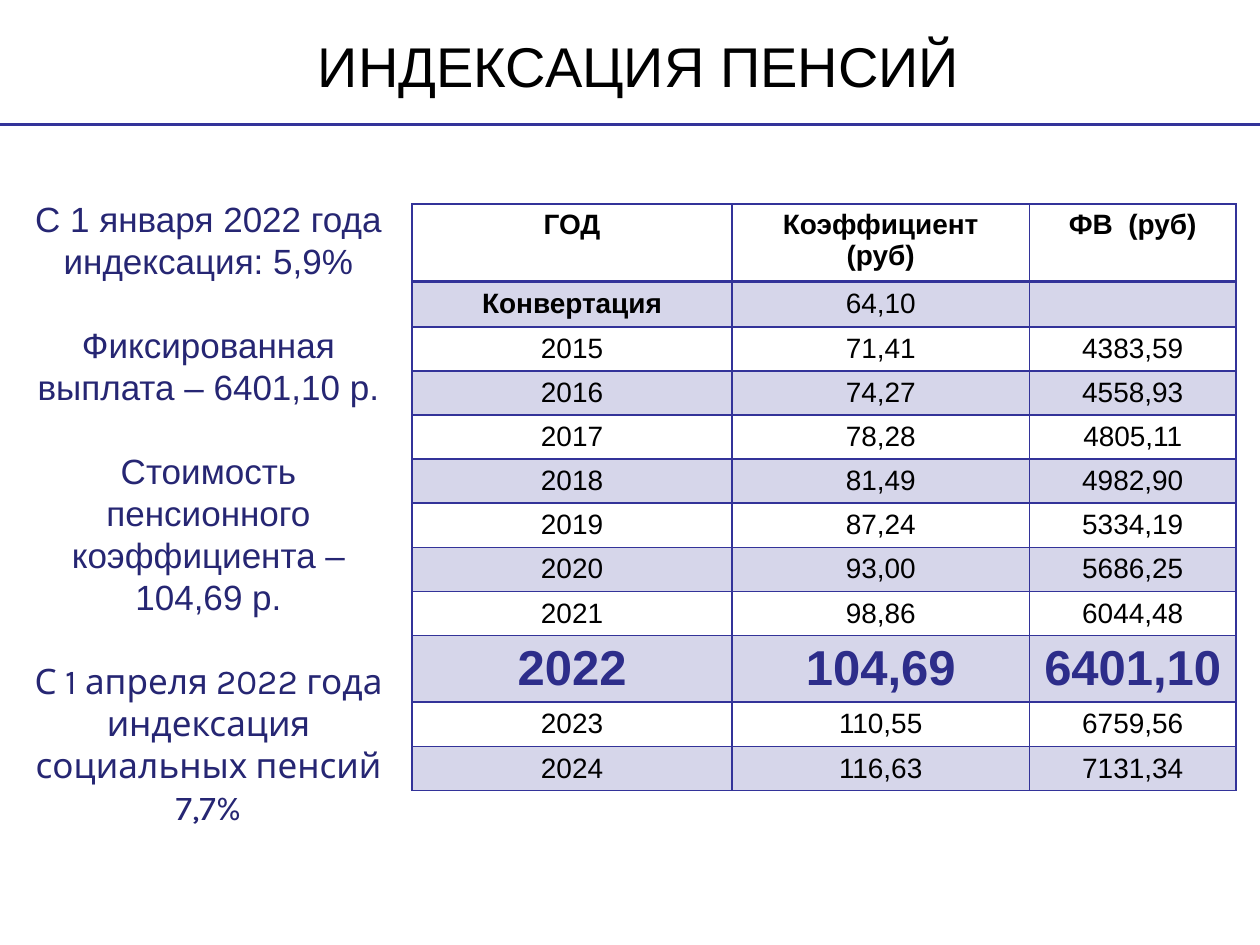
from lxml import etree
from pptx import Presentation
from pptx.dml.color import RGBColor
from pptx.enum.shapes import MSO_CONNECTOR
from pptx.enum.text import MSO_ANCHOR, PP_ALIGN
from pptx.oxml.ns import qn
from pptx.util import Inches, Pt

STRAIGHT = MSO_CONNECTOR.STRAIGHT
TOP, MIDDLE, BOTTOM = MSO_ANCHOR.TOP, MSO_ANCHOR.MIDDLE, MSO_ANCHOR.BOTTOM
CENTER = PP_ALIGN.CENTER

BLUE, NAVY, DEEP, BLACK = "333399", "262673", "2D2D8A", "000000"

NOTES = [
    ("С 1 января 2022 года индексация: 5,9%", "Arial"),
    ("Фиксированная выплата – 6401,10 р.", "Arial"),
    ("Стоимость пенсионного коэффициента – 104,69 р.", "Arial"),
    ("С 1 апреля 2022 года индексация социальных пенсий 7,7%", "Karla"),
]
ROWS = [
    ("ГОД", "Коэффициент\n(руб)", "ФВ  (руб)"),
    ("Конвертация", "64,10", ""),
    ("2015", "71,41", "4383,59"),
    ("2016", "74,27", "4558,93"),
    ("2017", "78,28", "4805,11"),
    ("2018", "81,49", "4982,90"),
    ("2019", "87,24", "5334,19"),
    ("2020", "93,00", "5686,25"),
    ("2021", "98,86", "6044,48"),
    ("2022", "104,69", "6401,10"),
    ("2023", "110,55", "6759,56"),
    ("2024", "116,63", "7131,34"),
]
WIDTHS = [2.54, 2.36, 1.64]
TALL = {"ГОД": 0.59, "2022": 0.53}


def paint(target, color):
    target.rgb = RGBColor.from_string(color)


def style(para, size, color, face="Arial", bold=False):
    para.alignment = CENTER
    for run in para.runs:
        run.font.name = face
        run.font.size = Pt(size)
        run.font.bold = bold
        paint(run.font.color, color)


def add_title(slide, box):
    title = slide.shapes.title
    title.left, title.top, title.width, title.height = map(Inches, box)
    frame = title.text_frame
    frame.text = "ИНДЕКСАЦИЯ ПЕНСИЙ"
    frame.vertical_anchor = BOTTOM
    style(frame.paragraphs[0], 32, BLACK)


def add_rule(slide, y):
    rule = slide.shapes.add_connector(
        STRAIGHT, Inches(10), Inches(y), Inches(0), Inches(y))
    rule.line.width = Pt(1.5)
    paint(rule.line.color, BLUE)
    etree.SubElement(rule._element.spPr, qn("a:effectLst"))


def add_notes(slide, box):
    frame = slide.shapes.add_textbox(*map(Inches, box)).text_frame
    frame.word_wrap = True
    frame.vertical_anchor = MIDDLE
    frame.text = "\n".join(text for text, face in NOTES)
    for i, (para, (text, face)) in enumerate(zip(frame.paragraphs, NOTES)):
        para.line_spacing = Pt(24)
        para.space_before = Pt(24 if i else 0)
        style(para, 20, NAVY, face)


def add_edges(cell, head):
    props = cell._tc.get_or_add_tcPr()
    for side in "LRTB":
        width = 2 if head and side == "B" else 1
        edge = etree.SubElement(props, qn("a:ln" + side), w=str(Pt(width)))
        fill = etree.SubElement(edge, qn("a:solidFill"))
        etree.SubElement(fill, qn("a:srgbClr"), val=BLUE)


def shade(cell):
    cell.fill.solid()
    paint(cell.fill.fore_color, BLUE)
    color = cell._tc.tcPr.find(".//" + qn("a:srgbClr") + "/..[@w]")
    color = cell._tc.tcPr.find(qn("a:solidFill") + "/" + qn("a:srgbClr"))
    etree.SubElement(color, qn("a:alpha"), val="20000")


def fill_cell(cell, text, row, col):
    head, key = row == 0, ROWS[row][0] == "2022"
    cell.text_frame.text = text
    cell.vertical_anchor = TOP if head else MIDDLE
    cell.margin_left = cell.margin_right = Inches(0.05)
    cell.margin_top = cell.margin_bottom = Inches(0.04 if head else 0.03)
    bold = head or key or (row == 1 and col == 0)
    for para in cell.text_frame.paragraphs:
        style(para, 28 if key else 16, DEEP if key else BLACK, bold=bold)
    add_edges(cell, head)
    if row % 2:
        shade(cell)
    else:
        cell.fill.background()


def add_rates(slide, box):
    table = slide.shapes.add_table(
        len(ROWS), len(WIDTHS), *map(Inches, box)).table
    table.first_row = table.horz_banding = False
    for col, width in zip(table.columns, WIDTHS):
        col.width = Inches(width)
    for r, texts in enumerate(ROWS):
        table.rows[r].height = Inches(TALL.get(texts[0], 0.35))
        for c, text in enumerate(texts):
            fill_cell(table.cell(r, c), text, r, c)


def main():
    deck = Presentation()
    deck.slide_width, deck.slide_height = Inches(10), Inches(7.5)
    slide = deck.slides.add_slide(deck.slide_layouts[5])
    add_rule(slide, 0.99)
    add_notes(slide, (0.12, 1.55, 3.07, 5.04))
    add_rates(slide, (3.27, 1.62, 6.54, 4.62))
    add_title(slide, (0.57, 0.06, 9, 0.77))
    deck.save("out.pptx")


if __name__ == "__main__":
    main()
